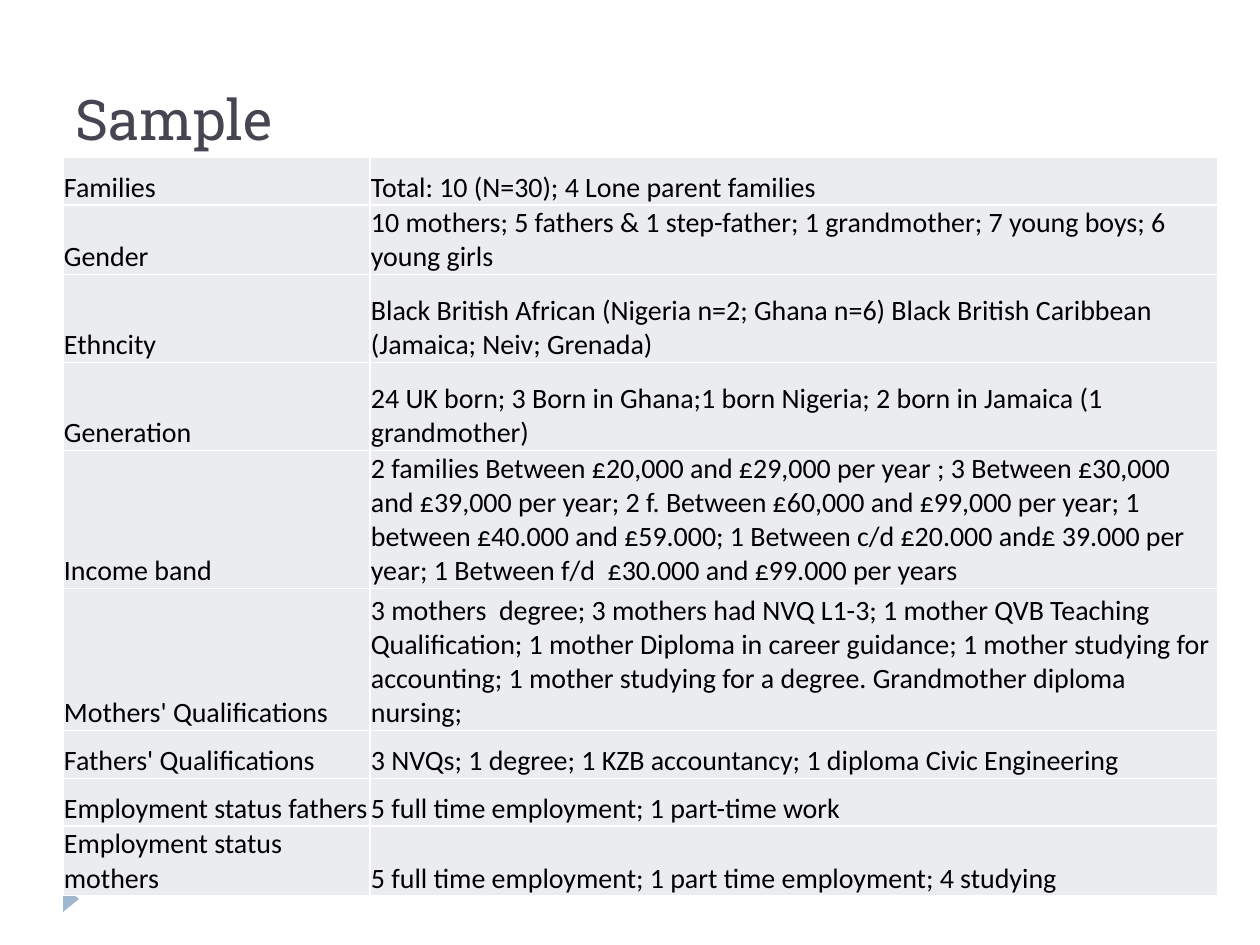
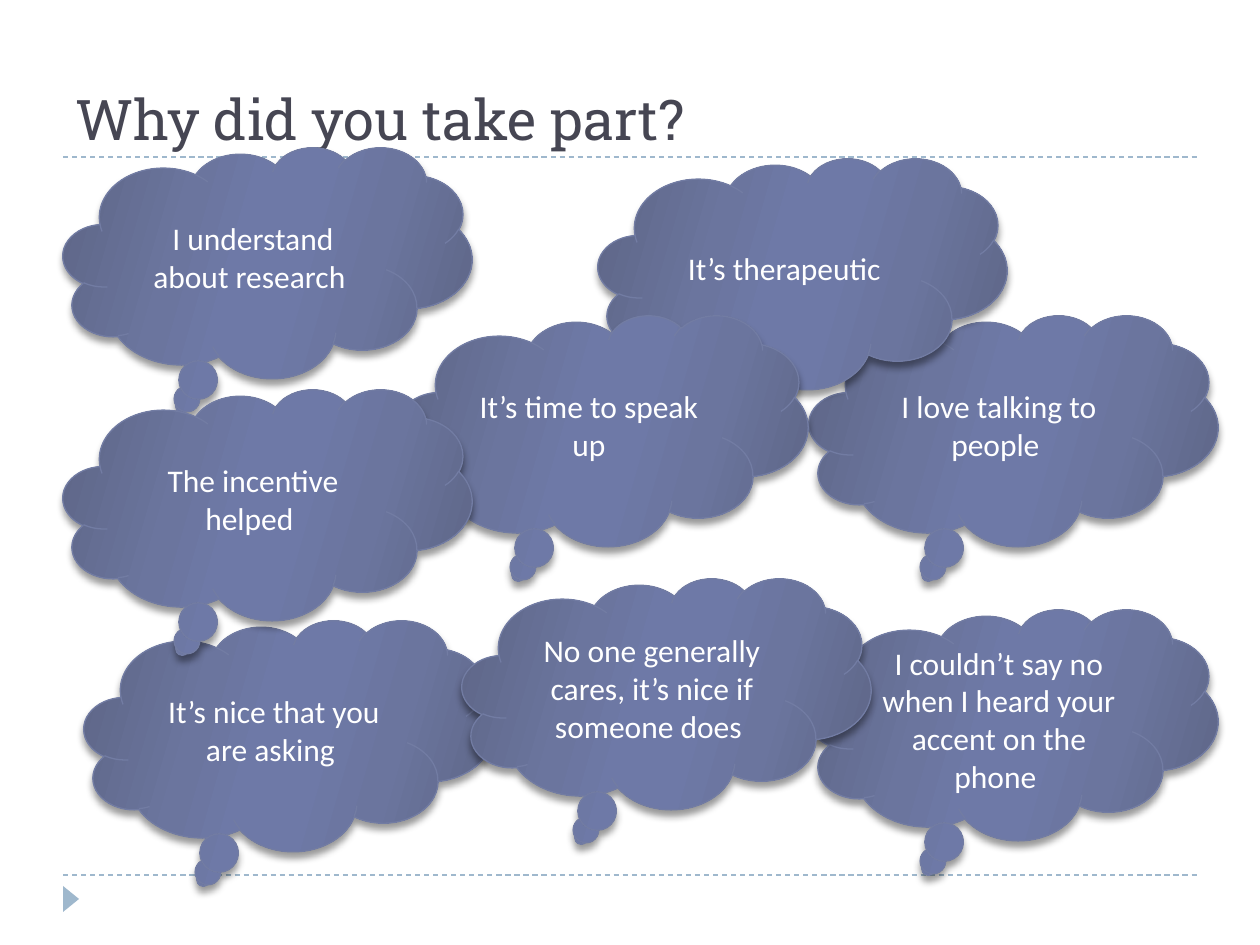
from lxml.etree import SubElement
from pptx import Presentation
from pptx.dml.color import RGBColor
from pptx.enum.dml import MSO_LINE
from pptx.enum.shapes import MSO_CONNECTOR, MSO_SHAPE
from pptx.enum.text import MSO_ANCHOR, PP_ALIGN
from pptx.oxml import parse_xml
from pptx.oxml.ns import nsdecls, qn
from pptx.util import Pt

# Content
SAMPLE_TITLE = "Sample"
SAMPLE_ROWS = [  # height, label, finding
    (48, "Families", "Total: 10 (N=30); 4 Lone parent families"),
    (67, "Gender", "10 mothers; 5 fathers & 1 step-father; 1 grandmother; "
     "7 young boys; 6 young girls"),
    (88, "Ethncity", "Black British African (Nigeria n=2; Ghana n=6) "
     "Black British Caribbean (Jamaica; Neiv; Grenada)"),
    (88, "Generation", "24 UK born; 3 Born in Ghana;1 born Nigeria; "
     "2 born in Jamaica (1 grandmother)"),
    (131, "Income band", "2 families Between £20,000 and £29,000 per year ; "
     "3 Between £30,000 and £39,000 per year; "
     "2 f. Between £60,000 and £99,000 per year; "
     "1 between £40.000 and £59.000; "
     "1 Between c/d £20.000 and£ 39.000 per year; "
     "1 Between f/d  £30.000 and £99.000 per years"),
    (142, "Mothers' Qualifications", "3 mothers  degree; 3 mothers had NVQ L1-3; "
     "1 mother QVB Teaching Qualification; 1 mother Diploma in career guidance; "
     "1 mother studying for accounting; 1 mother studying for a degree. "
     "Grandmother diploma nursing;"),
    (48, "Fathers' Qualifications",
     "3 NVQs; 1 degree; 1 KZB accountancy; 1 diploma Civic Engineering"),
    (48, "Employment status fathers", "5 full time employment; 1 part-time work"),
    (67, "Employment status mothers",
     "5 full time employment; 1 part time employment; 4 studying"),
]

REASONS_TITLE = "Why did you take part?"
REASONS = [  # left, top, quote, from back to front
    (63, 147, "I understand about research "),
    (84, 620, "It’s nice that you are asking "),
    (809, 315, "I love talking to people "),
    (809, 609, "I couldn’t say no when I heard your accent on the phone "),
    (598, 158, "It’s therapeutic "),
    (399, 315, "It’s time to speak up"),
    (462, 578, "No one generally cares, it’s nice if someone does "),
    (63, 389, "The incentive helped "),
]

# Shared look
SLIDE_SIZE = (1260, 945)
MARGIN, RIGHT_EDGE = 63, 1197
TITLE_RULE, FOOTER_RULE = 157, 875
TITLE_BOX = (MARGIN, 21, 1134, 137)
MARKER_BOX = (58, 891, 26, 16)
COLUMNS = (307, 848)
CLOUD_SIZE = (409, 231)

RULE, CELL, CLOUD_LINE = "9FB8CD", "EBECF0", "727CA3"
CLOUD_STOPS = [(0, "5D6585"), (30, "6B759E"), (45, "6E79A7"),
               (55, "6E79A7"), (73, "6B759E"), (100, "5D6585")]
TITLE_FONT = {"name": "Roboto Slab", "size": Pt(32), "color": "464653"}
CELL_FONT = {"name": "Calibri", "size": Pt(16), "color": "000000"}
CLOUD_FONT = {"name": "Calibri", "size": Pt(18), "color": "FFFFFF"}


def px(length):
    return round(length * 914400 / 126)


def hex_color(value):
    return RGBColor.from_string(value)


CELL_FORMAT = {"vertical_anchor": MSO_ANCHOR.BOTTOM, "margin_left": px(1),
               "margin_right": px(1), "margin_top": px(1), "margin_bottom": 0}


def apply(target, values):
    for name, value in values.items():
        if name == "color":
            target.color.rgb = hex_color(value)
        else:
            setattr(target, name, value)


def write(frame, words, font, align=PP_ALIGN.LEFT):
    paragraph = frame.paragraphs[0]
    paragraph.alignment = align
    run = paragraph.add_run()
    run.text = words
    apply(run.font, font)


def add_rule(slide, y):
    rule = slide.shapes.add_connector(
        MSO_CONNECTOR.STRAIGHT, px(MARGIN), px(y), px(RIGHT_EDGE), px(y))
    apply(rule.line, {"color": RULE, "width": Pt(0.75), "dash_style": MSO_LINE.DASH})
    SubElement(rule._element.spPr, qn("a:effectLst"))


def add_framed_slide(deck, heading):
    slide = deck.slides.add_slide(deck.slide_layouts[5])
    title = slide.shapes.title
    apply(title, dict(zip(("left", "top", "width", "height"), map(px, TITLE_BOX))))
    apply(title.text_frame, {"vertical_anchor": MSO_ANCHOR.BOTTOM, "word_wrap": True})
    write(title.text_frame, heading, TITLE_FONT)

    for y in (FOOTER_RULE, TITLE_RULE):
        add_rule(slide, y)
    marker = slide.shapes.add_shape(MSO_SHAPE.ISOSCELES_TRIANGLE, *map(px, MARKER_BOX))
    marker.rotation = 90
    marker.shadow.inherit = False
    marker.fill.solid()
    marker.fill.fore_color.rgb = hex_color(RULE)
    marker.line.fill.background()
    return slide


def add_borders(cell):
    properties = cell._tc.get_or_add_tcPr()
    for position, side in enumerate(("lnL", "lnR", "lnT", "lnB")):
        properties.insert(position, parse_xml(
            f'<a:{side} {nsdecls("a")} w="12700"><a:solidFill>'
            f'<a:srgbClr val="FFFFFF"/></a:solidFill></a:{side}>'))


def add_sample_table(slide):
    height = sum(row[0] for row in SAMPLE_ROWS)
    table = slide.shapes.add_table(
        len(SAMPLE_ROWS), len(COLUMNS), px(MARGIN), px(TITLE_RULE),
        px(sum(COLUMNS)), px(height)).table
    apply(table, {"first_row": False, "horz_banding": False})
    for column, width in zip(table.columns, COLUMNS):
        column.width = px(width)
    for row, (row_height, *entries) in zip(table.rows, SAMPLE_ROWS):
        row.height = px(row_height)
        for cell, entry in zip(row.cells, entries):
            apply(cell, CELL_FORMAT)
            cell.fill.solid()
            cell.fill.fore_color.rgb = hex_color(CELL)
            add_borders(cell)
            write(cell.text_frame, entry, CELL_FONT)


def add_cloud(slide, left, top, quote):
    cloud = slide.shapes.add_shape(
        MSO_SHAPE.CLOUD_CALLOUT, *map(px, (left, top, *CLOUD_SIZE)))
    apply(cloud.line, {"color": CLOUD_LINE, "width": Pt(0.75)})
    cloud.shadow.inherit = False

    # Gradient and soft shadow
    properties = cloud._element.spPr
    stops = "".join(f'<a:gs pos="{at * 1000}"><a:srgbClr val="{color}"/></a:gs>'
                    for at, color in CLOUD_STOPS)
    properties.find(qn("a:prstGeom")).addnext(parse_xml(
        f'<a:gradFill {nsdecls("a")} rotWithShape="1"><a:gsLst>{stops}</a:gsLst>'
        f'<a:lin ang="{16 * 60000}" scaled="0"/></a:gradFill>'))
    properties.find(qn("a:effectLst")).append(parse_xml(
        f'<a:outerShdw {nsdecls("a")} blurRad="{Pt(4)}" dist="{Pt(3.4)}" '
        f'dir="{90 * 60000}" rotWithShape="0"><a:srgbClr val="000000">'
        '<a:alpha val="40000"/></a:srgbClr></a:outerShdw>'))

    apply(cloud.text_frame, {"word_wrap": True, "vertical_anchor": MSO_ANCHOR.MIDDLE})
    write(cloud.text_frame, quote, CLOUD_FONT, PP_ALIGN.CENTER)


def main():
    deck = Presentation()
    deck.slide_width, deck.slide_height = map(px, SLIDE_SIZE)

    add_sample_table(add_framed_slide(deck, SAMPLE_TITLE))

    reasons = add_framed_slide(deck, REASONS_TITLE)
    for left, top, quote in REASONS:
        add_cloud(reasons, left, top, quote)

    deck.save("out.pptx")


if __name__ == "__main__":
    main()
